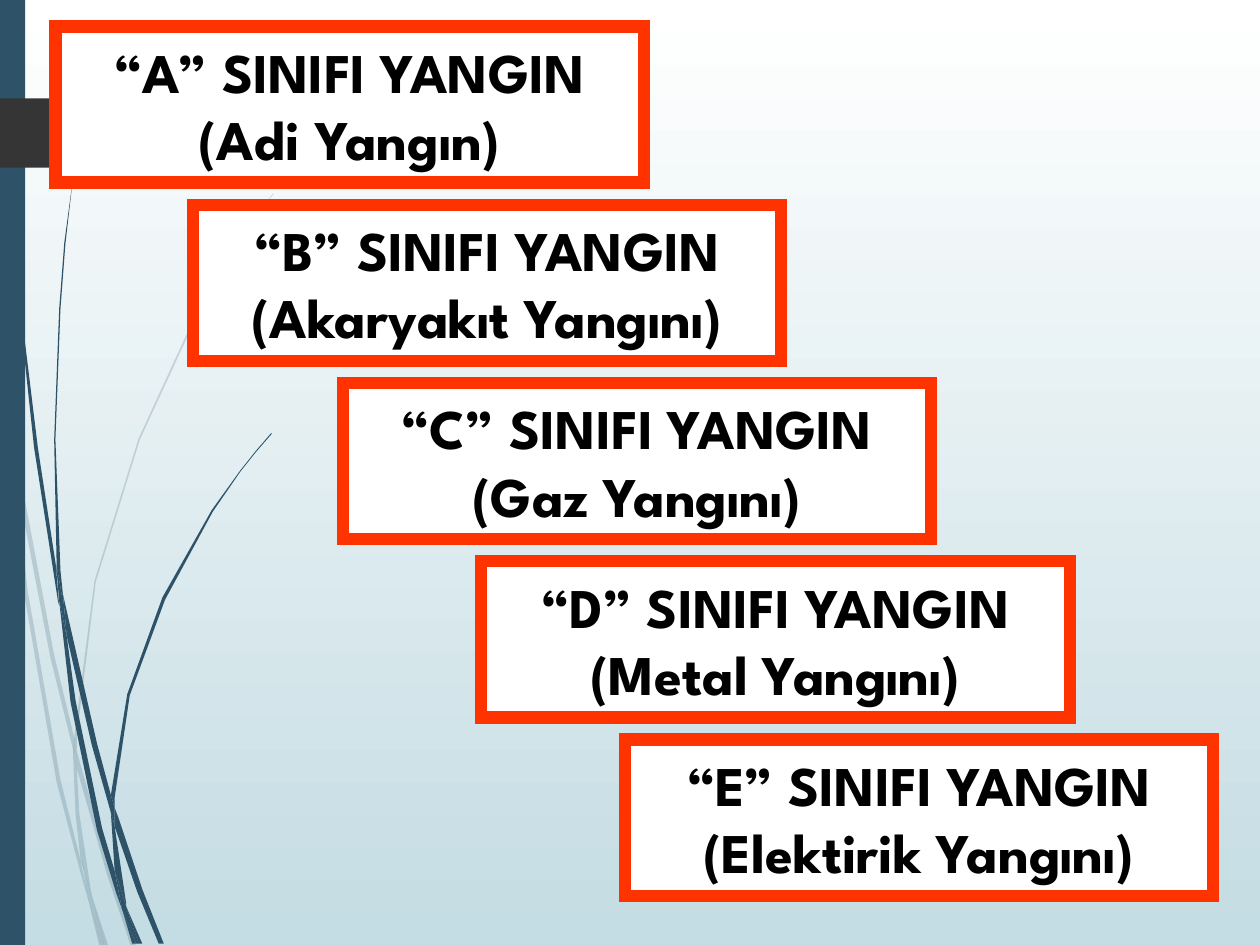
import pptx
import pptx.dml.color
import pptx.enum.shapes
import pptx.enum.text
import pptx.util
from lxml import etree

# Content: fire classes as (letter, kind of fire, left edge)
FIRE_CLASSES = [
    ("A", "Adi Yangın", 44),
    ("B", "Akaryakıt Yangını", 153),
    ("C", "Gaz Yangını", 272),
    ("D", "Metal Yangını", 382),
    ("E", "Elektirik Yangını", 496),
]
CARD_TOP, CARD_STEP, CARD_WIDTH, CARD_HEIGHT = 21, 141.5, 467, 124

COLORS = {
    "sky": "FFFFFF", "mist": "C4DCE3", "stem": "2E5369", "tab": "353535",
    "card": "FFFFFF", "border": "FF3300", "text": "000000",
}
FONT = "League Spartan"
PX = 9144  # one px is a hundredth of an inch
WIDTH, HEIGHT = 1000, 750

# Decoration: outlines of the grass stems, corner by corner
PALE_STEMS = [
    [(8, 350), (6, 322), (0, 282), (0, 299), (7, 344)],
    [(40, 522), (59, 599), (59, 586), (43, 520), (10, 345), (12, 376)],
    [(64, 607), (61, 596), (61, 610), (85, 694), (104, 751), (108, 751), (88, 692)],
    [(83, 751), (86, 751), (73, 711)],
    [(64, 683), (48, 619), (22, 469), (12, 376), (8, 350), (19, 470), (45, 621),
     (64, 693), (70, 714), (69, 707)],
    [(58, 599), (60, 646), (64, 683), (67, 692), (73, 711), (72, 706), (63, 646),
     (61, 610), (61, 608)],
    [(61, 584), (76, 462), (111, 349), (159, 245), (187, 198), (201, 175), (217, 154),
     (217, 153), (201, 175), (186, 197), (158, 244), (110, 348), (75, 461), (59, 584),
     (59, 586), (61, 596)],
    [(70, 714), (79, 751), (82, 751)],
    [(61, 608), (61, 610), (61, 596), (59, 586), (58, 599)],
    [(67, 692), (65, 683), (69, 707), (70, 714), (82, 751), (83, 751), (73, 711)],
]
DARK_STEMS = [
    [(5, 110), (14, 233), (27, 355), (46, 477), (47, 481), (45, 457), (45, 453),
     (30, 355), (15, 232), (6, 109), (4, 48), (3, 0), (2, 0), (3, 48)],
    [(73, 592), (88, 645), (88, 633), (88, 631), (77, 590), (50, 472), (53, 505)],
    [(94, 649), (91, 641), (91, 656), (109, 708), (126, 749), (130, 749), (113, 706)],
    [(91, 691), (81, 657), (60, 556), (53, 505), (47, 477), (56, 557), (77, 659),
     (92, 708), (97, 722), (96, 717)],
    [(50, 472), (48, 453), (44, 349), (48, 245), (52, 193), (58, 141), (51, 193),
     (47, 245), (43, 349), (45, 449), (49, 472)],
    [(110, 749), (113, 749), (100, 719)],
    [(47, 477), (53, 505), (50, 472), (49, 472), (45, 449), (45, 453)],
    [(91, 633), (103, 552), (131, 476), (169, 406), (191, 374), (203, 359), (216, 344),
     (215, 344), (203, 358), (191, 373), (168, 405), (129, 474), (101, 551), (88, 631),
     (91, 641)],
    [(97, 722), (105, 749), (108, 749)],
    [(88, 645), (91, 691), (96, 706), (100, 719), (100, 716), (91, 656), (90, 651)],
    [(88, 645), (90, 651), (91, 656), (91, 641), (88, 631), (88, 633)],
    [(96, 706), (91, 691), (96, 717), (97, 722), (108, 749), (110, 749), (100, 719)],
]
TAB = [(0, 78), (121, 78), (124, 79), (149, 104), (149, 107), (124, 132), (121, 133), (0, 133)]


def px(length):
    return round(length * PX)


def rgb(name):
    return pptx.dml.color.RGBColor.from_string(COLORS[name])


def paint(shape, fill, opacity=None):
    shape.shadow.inherit = False
    shape.fill.solid()
    shape.fill.fore_color.rgb = rgb(fill)
    shape.line.fill.background()
    if opacity is not None:
        color = shape.fill._xPr.find(".//" + pptx.oxml.ns.qn("a:srgbClr"))
        etree.SubElement(color, pptx.oxml.ns.qn("a:alpha"), val=str(opacity * 1000))


def add_outline(shapes, points, fill, opacity=None):
    builder = shapes.build_freeform(*points[0], scale=PX)
    builder.add_line_segments(points[1:], close=True)
    paint(builder.convert_to_shape(), fill, opacity)


def add_box(shapes, left, top, width, height, fill):
    box = shapes.add_shape(pptx.enum.shapes.MSO_SHAPE.RECTANGLE,
                           px(left), px(top), px(width), px(height))
    paint(box, fill)
    return box


def write(shape, lines, size, color, bold=False, align=pptx.enum.text.PP_ALIGN.CENTER):
    frame = shape.text_frame
    frame.word_wrap = True
    frame.vertical_anchor = pptx.enum.text.MSO_ANCHOR.MIDDLE
    frame.text = "\n".join(lines)
    for paragraph in frame.paragraphs:
        paragraph.alignment = align
        for run in paragraph.runs:
            run.font.name = FONT
            run.font.size = pptx.util.Pt(size)
            run.font.bold = bold
            run.font.color.rgb = rgb(color)


def main():
    deck = pptx.Presentation()
    deck.slide_width, deck.slide_height = px(WIDTH), px(HEIGHT)
    slide = deck.slides.add_slide(deck.slide_layouts[6])

    # Background
    backdrop = slide.background.fill
    backdrop.gradient()
    backdrop.gradient_angle = 270
    for stop, name in zip(backdrop.gradient_stops, ("sky", "mist")):
        stop.color.rgb = rgb(name)

    # Stems, side band and tab
    for stems, opacity in ((PALE_STEMS, 20), (DARK_STEMS, None)):
        tuft = slide.shapes.add_group_shape()
        for points in stems:
            add_outline(tuft.shapes, points, "stem", opacity)
    add_box(slide.shapes, 0, 0, 20, HEIGHT, "stem")
    add_outline(slide.shapes, TAB, "tab")

    # Staircase of fire classes
    for step, (letter, kind, left) in enumerate(FIRE_CLASSES):
        card = add_box(slide.shapes, left, CARD_TOP + step * CARD_STEP,
                       CARD_WIDTH, CARD_HEIGHT, "card")
        card.line.color.rgb = rgb("border")
        card.line.width = pptx.util.Pt(7)
        etree.SubElement(card.line._get_or_add_ln(), pptx.oxml.ns.qn("a:miter"), lim="800000")
        write(card, [f"“{letter}” SINIFI YANGIN", f"({kind})"], size=32, color="text", bold=True)

    deck.save("out.pptx")


if __name__ == "__main__":
    main()
